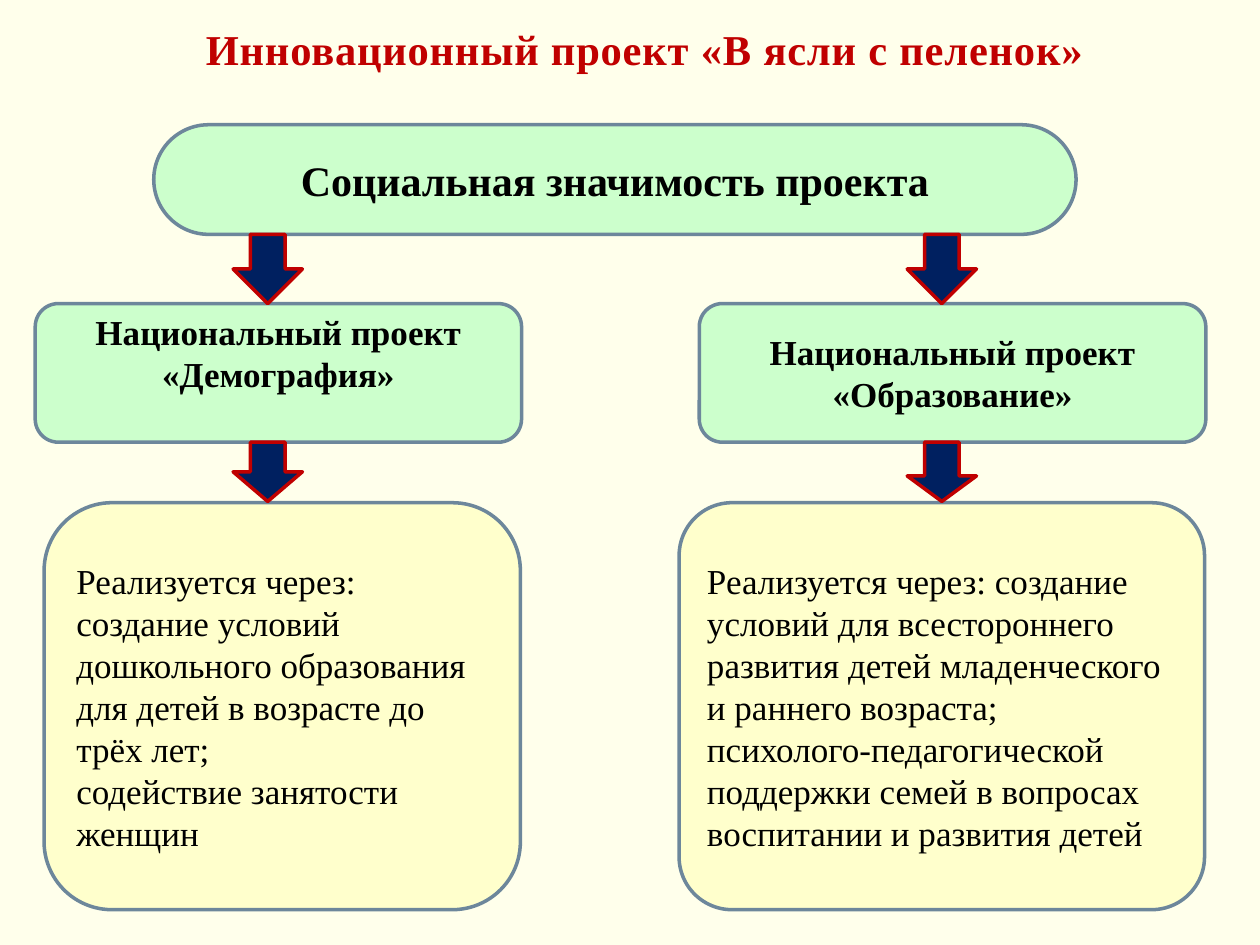
from pptx import Presentation
from pptx.dml.color import RGBColor
from pptx.enum.shapes import MSO_SHAPE
from pptx.enum.text import MSO_ANCHOR, PP_ALIGN
from pptx.util import Inches, Pt

COLORS = {
    "page": "FFFFEB",
    "title": "C00000",
    "green": "CCFFCC",
    "cream": "FFFFCC",
    "border": "6D879B",
    "arrow": "002060",
    "text": "000000",
}
FONT = "Times New Roman"


class ProjectSlide:
    """Holds the style and the current slide of the project diagram."""

    def __init__(self, deck):
        self.page = deck.slides.add_slide(deck.slide_layouts[5])
        fill = self.page.background.fill
        fill.solid()
        fill.fore_color.rgb = self.color("page")

    def color(self, name):
        return RGBColor.from_string(COLORS[name])

    def add_text(self, frame, paragraphs, size, color="text", bold=False, align=PP_ALIGN.LEFT):
        frame.word_wrap = True
        frame.vertical_anchor = MSO_ANCHOR.MIDDLE
        for index, text in enumerate(paragraphs):
            para = frame.paragraphs[0] if index == 0 else frame.add_paragraph()
            para.alignment = align
            span = para.add_run()
            span.text = text
            span.font.name = FONT
            span.font.size = Pt(size)
            span.font.bold = bold
            span.font.color.rgb = self.color(color)

    def title(self, text, left, top, width, height):
        box = self.page.shapes.title
        box.left, box.top = Inches(left), Inches(top)
        box.width, box.height = Inches(width), Inches(height)
        self.add_text(box.text_frame, [text], 24.3, "title", True, PP_ALIGN.CENTER)
        span = box.text_frame.paragraphs[0].runs[0]
        span.font._element.set("spc", "50")

    def shape(self, kind, left, top, width, height, fill, line):
        box = self.page.shapes.add_shape(
            kind, Inches(left), Inches(top), Inches(width), Inches(height))
        box.shadow.inherit = False
        box.fill.solid()
        box.fill.fore_color.rgb = self.color(fill)
        box.line.color.rgb = self.color(line)
        box.line.width = Pt(2)
        return box

    def panel(self, left, top, width, height, fill, rounding=0.1667):
        box = self.shape(MSO_SHAPE.ROUNDED_RECTANGLE, left, top, width, height, fill, "border")
        box.adjustments[0] = rounding
        return box

    def heading(self, text, left, top, width, height, size=20, rounding=0.1667, lift=0):
        box = self.panel(left, top, width, height, "green", rounding)
        box.text_frame.margin_bottom = Inches(0.05 + lift)
        self.add_text(box.text_frame, [text], size, bold=True, align=PP_ALIGN.CENTER)

    def card(self, paragraphs, left, width, rounding=0.1667):
        box = self.panel(left, 3.99, width, 3.23, "cream", rounding)
        self.add_text(box.text_frame, paragraphs, 20)

    def arrow(self, left, top, height, head=0.5):
        box = self.shape(MSO_SHAPE.DOWN_ARROW, left, top, 0.55, height, "arrow", "title")
        box.adjustments[1] = head


def main():
    deck = Presentation()
    deck.slide_width, deck.slide_height = Inches(10), Inches(7.5)
    slide = ProjectSlide(deck)

    slide.title("Инновационный проект «В ясли с пеленок»", 0.62, 0.11, 9, 0.55)
    slide.heading("Социальная значимость проекта", 1.22, 0.99, 7.32, 0.87, 24, 0.5)
    slide.heading("Национальный проект «Демография»", 0.28, 2.41, 3.86, 1.1, lift=0.32)
    slide.heading("Национальный проект «Образование»", 5.55, 2.41, 4.02, 1.1)

    slide.card([
        "Реализуется через: создание условий дошкольного образования "
        "для детей в возрасте до трёх лет;",
        "содействие занятости женщин",
    ], 0.35, 3.78)
    slide.card([
        "Реализуется через: создание условий для всестороннего развития "
        "детей младенческого и раннего возраста;",
        "психолого-педагогической поддержки семей в вопросах "
        "воспитании и развития детей",
    ], 5.39, 4.17, 0.13)

    for left, lower_head in ((7.2, 0.43), (1.85, 0.5)):
        slide.arrow(left, 3.51, 0.47, lower_head)
        slide.arrow(left, 1.86, 0.55)

    deck.save("out.pptx")


if __name__ == "__main__":
    main()
